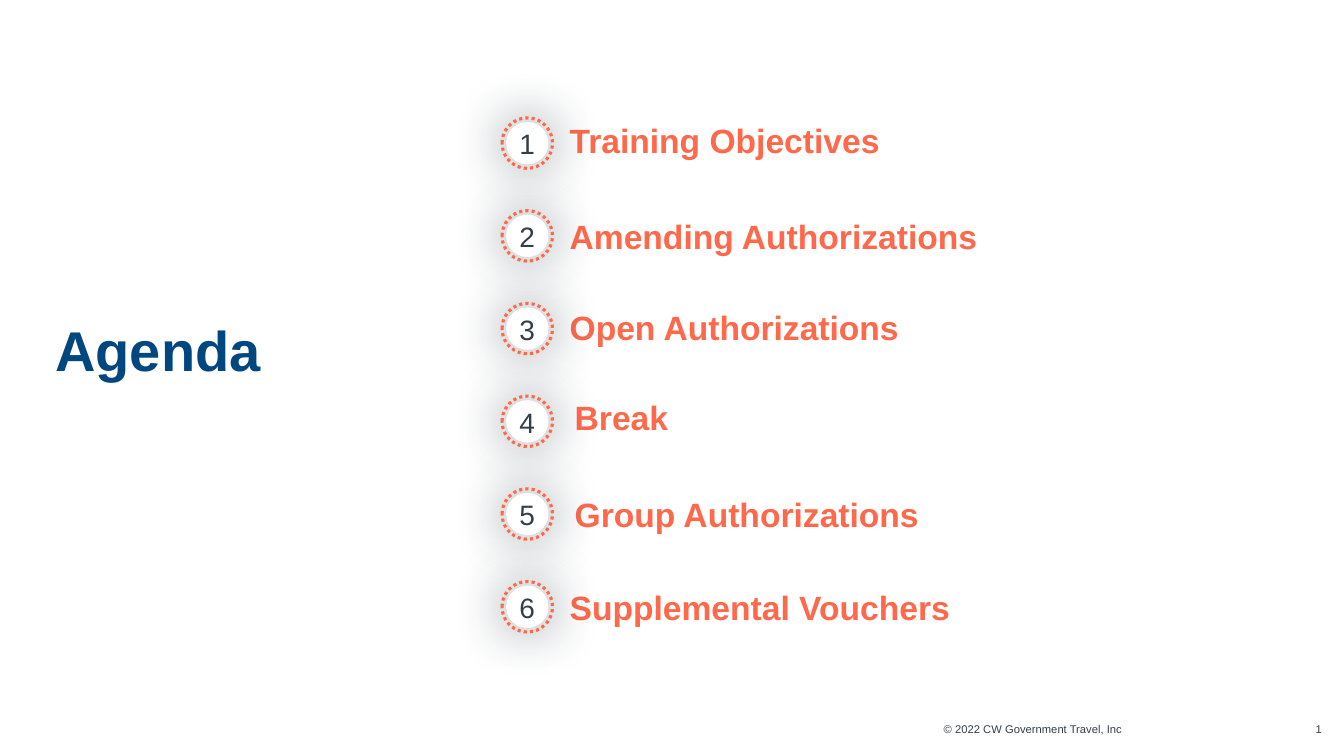
from lxml.etree import SubElement
from pptx import Presentation
from pptx.dml.color import RGBColor
from pptx.enum.dml import MSO_LINE_DASH_STYLE as Dash
from pptx.enum.shapes import MSO_SHAPE as Shape
from pptx.enum.text import MSO_ANCHOR as Anchor, PP_ALIGN as Align
from pptx.oxml.ns import qn
from pptx.util import Inches, Pt

CORAL = RGBColor(0xFF, 0x69, 0x4B)
NAVY = RGBColor(0x00, 0x46, 0x7F)
SLATE = RGBColor(0x33, 0x3F, 0x48)
WHITE = RGBColor(0xFF, 0xFF, 0xFF)

ROW_TOP = 1.17
ROW_PITCH = 0.92
RING_LEFT = 4.98
TIGHT = 0.65

AGENDA = [
    ("Training Objectives", 5.65, 1.31, 0.27, TIGHT),
    ("Amending Authorizations", 5.65, 2.14, 0.4, 1.0),
    ("Open Authorizations", 5.65, 3.17, 0.26, TIGHT),
    ("Break", 5.7, 4.06, 0.27, TIGHT),
    ("Group Authorizations", 5.7, 5.03, 0.26, TIGHT),
    ("Supplemental Vouchers", 5.65, 5.82, 0.4, 1.0),
]


class AgendaSlide:
    font = "Arial"

    def __init__(self, page):
        self.page = page

    def text(self, words, left, top, width, height, size, color, bold=False,
             align=Align.LEFT, anchor=Anchor.TOP, spacing=1.0):
        box = self.page.shapes.add_textbox(
            Inches(left), Inches(top), Inches(width), Inches(height))
        frame = box.text_frame
        frame.word_wrap = True
        frame.vertical_anchor = anchor
        frame.margin_left = frame.margin_right = 0
        frame.margin_top = frame.margin_bottom = 0
        para = frame.paragraphs[0]
        para.text = words
        para.alignment = align
        para.line_spacing = spacing
        para.font.name = self.font
        para.font.size = Pt(size)
        para.font.bold = bold
        para.font.color.rgb = color

    def circle(self, left, top, size):
        circle = self.page.shapes.add_shape(
            Shape.OVAL, Inches(left), Inches(top), Inches(size), Inches(size))
        circle.shadow.inherit = False
        return circle

    def disc(self, left, top, size):
        disc = self.circle(left, top, size)
        disc.fill.solid()
        disc.fill.fore_color.rgb = WHITE
        disc.line.fill.background()
        effects = disc.element.spPr.find(qn("a:effectLst"))
        shadow = SubElement(effects, qn("a:outerShdw"), blurRad=str(Pt(40)),
                            dist="0", dir="0", algn="ctr", rotWithShape="0")
        tint = SubElement(shadow, qn("a:srgbClr"), val=str(SLATE))
        SubElement(tint, qn("a:alpha"), val="70000")

    def ring(self, left, top, size):
        ring = self.circle(left, top, size)
        ring.fill.background()
        ring.line.color.rgb = CORAL
        ring.line.width = Pt(2.25)
        ring.line.dash_style = Dash.ROUND_DOT

    def badge(self, number, left, top):
        self.disc(left + 0.04, top + 0.04, 0.42)
        self.ring(left, top, 0.5)
        self.text(str(number), left, top + 0.09, 0.5, 0.34, 20, SLATE,
                  align=Align.CENTER)


def main():
    deck = Presentation()
    deck.slide_width = Inches(13.33)
    deck.slide_height = Inches(7.5)
    slide = AgendaSlide(deck.slides.add_slide(deck.slide_layouts[6]))

    slide.text("© 2022 CW Government Travel, Inc", 8.38, 7.17, 2.75, 0.14,
               8, SLATE, align=Align.RIGHT)
    slide.text("1", 12.88, 7.17, 0.23, 0.14, 8, SLATE, align=Align.RIGHT)
    slide.text("Agenda", 0.55, 0.71, 3.5, 5.5, 40, NAVY, bold=True,
               anchor=Anchor.MIDDLE)

    for row, (label, left, top, height, spacing) in enumerate(AGENDA):
        slide.text(label, left, top, 6.5, height, 24, CORAL, bold=True,
                   anchor=Anchor.MIDDLE, spacing=spacing)
        slide.badge(row + 1, RING_LEFT, ROW_TOP + row * ROW_PITCH)

    deck.save("out.pptx")


if __name__ == "__main__":
    main()
